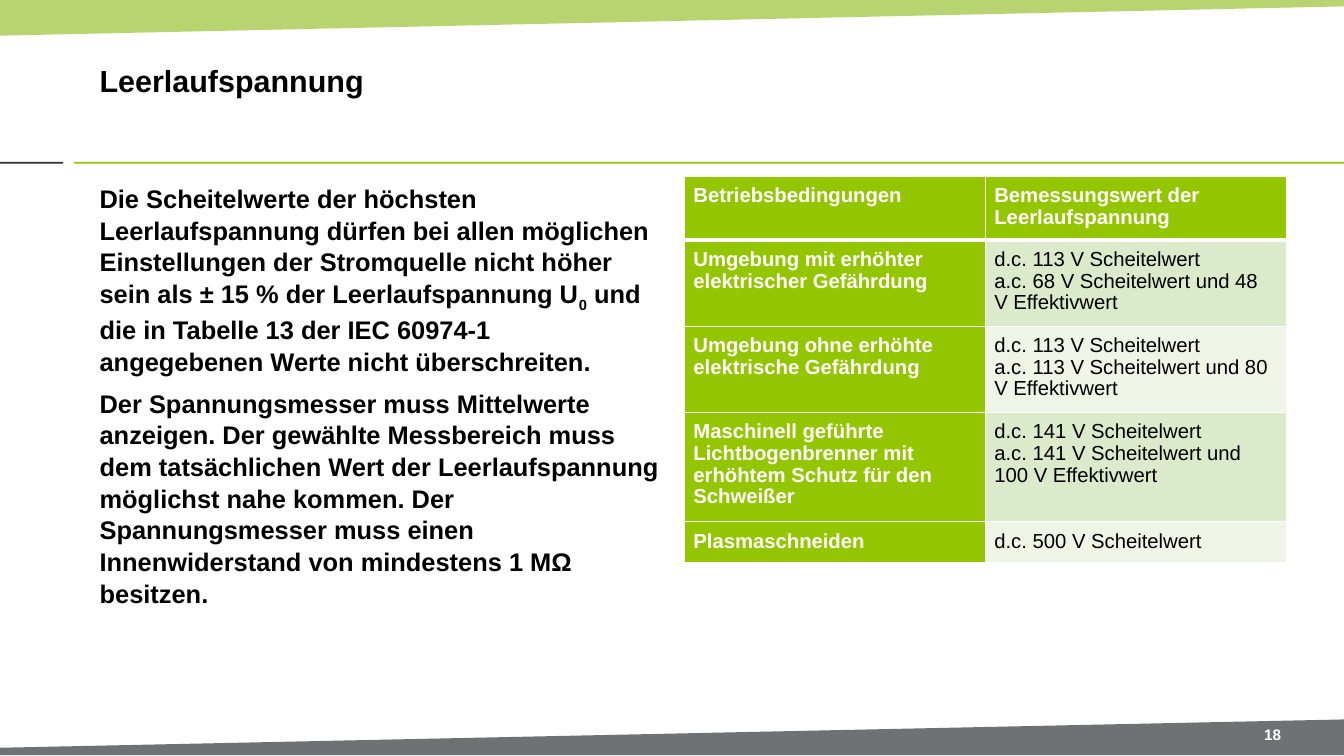
from dataclasses import dataclass

from lxml.etree import SubElement
from pptx import Presentation
from pptx.dml.color import RGBColor
from pptx.enum.shapes import MSO_SHAPE
from pptx.enum.text import MSO_ANCHOR, MSO_AUTO_SIZE, PP_ALIGN
from pptx.oxml import parse_xml
from pptx.oxml.ns import nsdecls, qn
from pptx.util import Pt


@dataclass(frozen=True)
class Theme:
    font: str = "Arial"
    green: str = "94C600"
    band_green: str = "95C02A"
    band_gray: str = "707173"
    dark: str = "313130"
    black: str = "000000"
    white: str = "FFFFFF"
    value_fills: tuple = ("DCEACC", "EEF5E7")
    title_size: int = 24
    body_size: int = 20
    table_size: int = 16
    number_size: int = 12


THEME = Theme()
WIDTH, HEIGHT = 1058.4, 595.44

BODY = [
    [("Die Scheitelwerte der höchsten Leerlaufspannung dürfen bei allen möglichen "
      "Einstellungen der Stromquelle nicht höher sein als ± 15 % der Leerlaufspannung U", False),
     ("0", True),
     (" und die in Tabelle 13 der IEC 60974-1 angegebenen Werte nicht überschreiten.", False)],
    [("Der Spannungsmesser muss Mittelwerte anzeigen. Der gewählte Messbereich muss dem "
      "tatsächlichen Wert der Leerlaufspannung möglichst nahe kommen. Der Spannungsmesser "
      "muss einen Innenwiderstand von mindestens 1 MΩ besitzen.", False)],
]

# Row height, operating condition, lines of the rated value
TABLE_ROWS = [
    (50, "Betriebsbedingungen", ["Bemessungswert der Leerlaufspannung"]),
    (68, "Umgebung mit erhöhter elektrischer Gefährdung",
     ["d.c. 113 V Scheitelwert", "a.c. 68 V Scheitelwert und 48 V Effektivwert"]),
    (68, "Umgebung ohne erhöhte elektrische Gefährdung",
     ["d.c. 113 V Scheitelwert", "a.c. 113 V Scheitelwert und 80 V Effektivwert"]),
    (86, "Maschinell geführte Lichtbogenbrenner mit erhöhtem Schutz für den Schweißer",
     ["d.c. 141 V Scheitelwert", "a.c. 141 V Scheitelwert und 100 V Effektivwert"]),
    (32, "Plasmaschneiden", ["d.c. 500 V Scheitelwert"]),
]


def paint(shape, color):
    shape.shadow.inherit = False
    shape.fill.solid()
    shape.fill.fore_color.rgb = RGBColor.from_string(color)
    shape.line.fill.background()


def add_band(slide, points, color, opacity=100):
    start, *others = [(Pt(x), Pt(y)) for x, y in points]
    builder = slide.shapes.build_freeform(*start, scale=1.0)
    builder.add_line_segments(others, close=True)
    band = builder.convert_to_shape()
    paint(band, color)
    if opacity < 100:
        color_element = band.fill._xPr.find(qn("a:solidFill"))[0]
        SubElement(color_element, qn("a:alpha"), val=str(opacity * 1000))


def add_rule(slide, left, width, color):
    rule = slide.shapes.add_shape(MSO_SHAPE.RECTANGLE, Pt(left), Pt(127.44), Pt(width), Pt(1.44))
    paint(rule, color)


def add_run(paragraph, text, size, color, bold=True):
    run = paragraph.add_run()
    run.text = text
    run.font.name = THEME.font
    run.font.size = Pt(size)
    run.font.bold = bold
    run.font.color.rgb = RGBColor.from_string(color)
    return run


def format_frame(frame, anchor):
    frame.word_wrap = True
    frame.auto_size = MSO_AUTO_SIZE.NONE
    frame.vertical_anchor = anchor
    frame.margin_left = frame.margin_right = Pt(7.92)
    frame.margin_top = frame.margin_bottom = Pt(4.32)


def add_title(slide, text):
    title = slide.shapes.title
    title.left, title.top, title.width, title.height = Pt(70.56), Pt(20.16), Pt(830.88), Pt(85.68)
    format_frame(title.text_frame, MSO_ANCHOR.MIDDLE)
    paragraph = title.text_frame.paragraphs[0]
    paragraph.alignment = PP_ALIGN.LEFT
    add_run(paragraph, text, THEME.title_size, THEME.black)


def add_body(slide, paragraphs):
    box = slide.shapes.add_textbox(Pt(70.56), Pt(138.96), Pt(458.64), Pt(390.24))
    frame = box.text_frame
    format_frame(frame, MSO_ANCHOR.TOP)
    for index, runs in enumerate(paragraphs):
        paragraph = frame.add_paragraph() if index else frame.paragraphs[0]
        paragraph.line_spacing = 1.04
        paragraph.space_before = Pt(8 if index else 0)
        for text, subscript in runs:
            run = add_run(paragraph, text, THEME.body_size, THEME.black)
            if subscript:
                run.font._element.set("baseline", "-25000")


def add_slide_number(slide, text):
    box = slide.shapes.add_textbox(Pt(971.28), Pt(568.08), Pt(61.92), Pt(20.88))
    format_frame(box.text_frame, MSO_ANCHOR.MIDDLE)
    paragraph = box.text_frame.paragraphs[0]
    paragraph.alignment = PP_ALIGN.CENTER
    add_run(paragraph, text, THEME.number_size, THEME.white)


def set_borders(cell, widths):
    properties = cell._tc.get_or_add_tcPr()
    for position, (side, width) in enumerate(widths.items()):
        properties.insert(position, parse_xml(
            f'<a:ln{side} {nsdecls("a")} w="{Pt(width)}"><a:solidFill>'
            f'<a:srgbClr val="{THEME.white}"/></a:solidFill></a:ln{side}>'))


def fill_cell(cell, lines, fill, color, bold, top_border, bottom_border):
    cell.margin_left = cell.margin_right = cell.margin_top = cell.margin_bottom = Pt(7.2)
    cell.vertical_anchor = MSO_ANCHOR.TOP
    cell.fill.solid()
    cell.fill.fore_color.rgb = RGBColor.from_string(fill)
    paragraph = cell.text_frame.paragraphs[0]
    paragraph.line_spacing = 0.96
    for index, line in enumerate(lines):
        if index:
            paragraph.add_line_break()
        add_run(paragraph, line, THEME.table_size, color, bold)
    set_borders(cell, {"L": 1, "R": 1, "T": top_border, "B": bottom_border})


def add_voltage_table(slide, rows):
    column_width = 237
    total_height = sum(height for height, _, _ in rows)
    frame = slide.shapes.add_table(
        len(rows), 2, Pt(538.9), Pt(138.96), Pt(2 * column_width), Pt(total_height))
    table = frame.table
    table.horz_banding = False
    for column in table.columns:
        column.width = Pt(column_width)
    for index, (height, condition, values) in enumerate(rows):
        table.rows[index].height = Pt(height)
        header = index == 0
        borders = (3 if index == 1 else 1, 3 if header else 1)
        fill = THEME.green if header else THEME.value_fills[(index - 1) % 2]
        color = THEME.white if header else THEME.black
        fill_cell(table.cell(index, 0), [condition], THEME.green, THEME.white, True, *borders)
        fill_cell(table.cell(index, 1), values, fill, color, header, *borders)


def main():
    presentation = Presentation()
    presentation.slide_width, presentation.slide_height = Pt(WIDTH), Pt(HEIGHT)
    slide = presentation.slides.add_slide(presentation.slide_layouts[5])

    # Slanted bands and the rules under the title
    add_band(slide, [(0, 0), (WIDTH, 0), (WIDTH, 5.04), (0, 28.08)], THEME.band_green, 67)
    add_rule(slide, 0, 49.68, THEME.dark)
    add_rule(slide, 58.32, WIDTH - 58.32, THEME.green)
    add_band(slide, [(WIDTH, 594.72), (0, 594.72), (0, 588.96), (WIDTH, 566.64)], THEME.band_gray)

    # Content
    add_title(slide, "Leerlaufspannung")
    add_body(slide, BODY)
    add_voltage_table(slide, TABLE_ROWS)
    add_slide_number(slide, "18")

    presentation.save("out.pptx")


if __name__ == "__main__":
    main()
